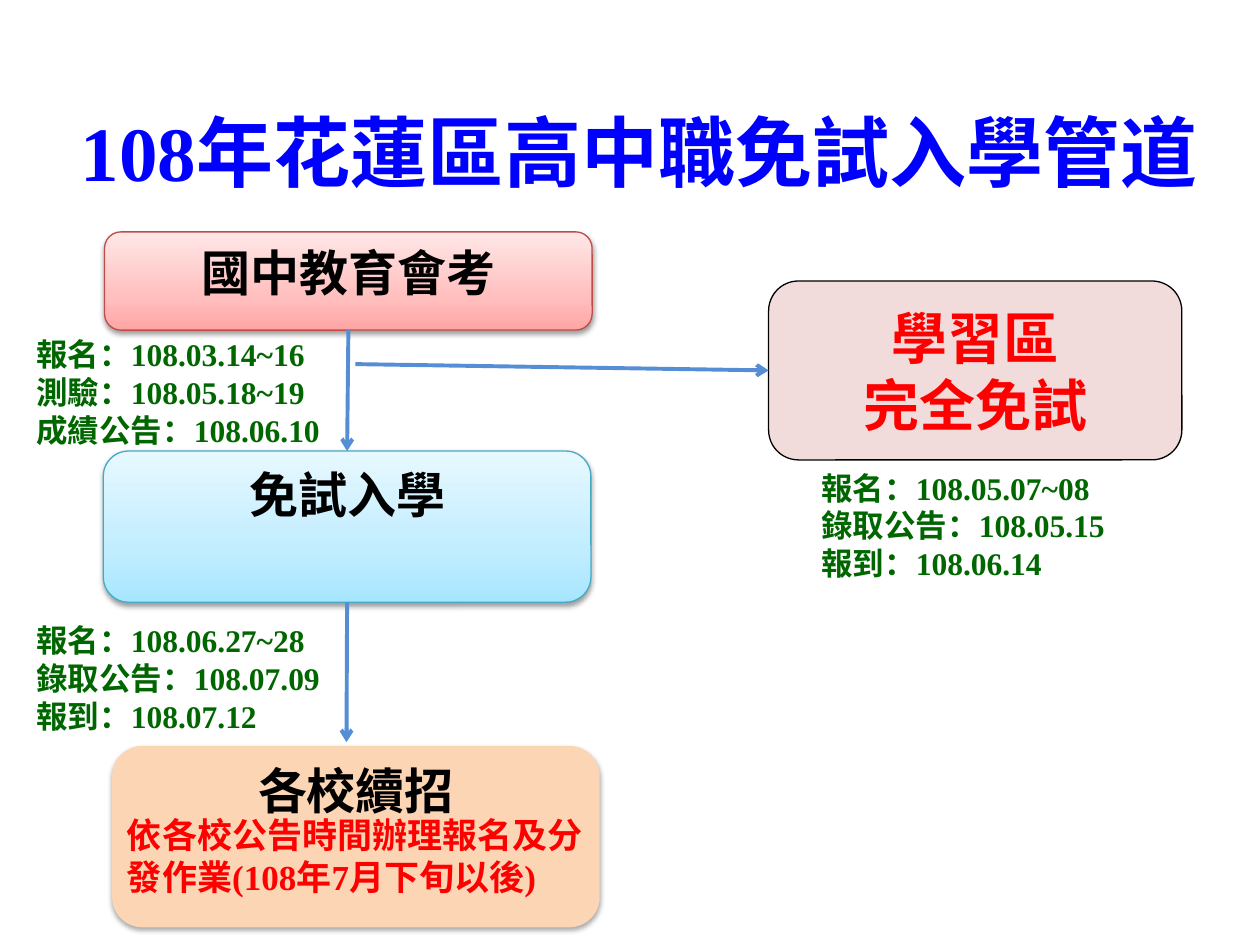
from lxml import etree
from pptx import Presentation
from pptx.dml.color import RGBColor
from pptx.enum import shapes, text
from pptx.oxml import parse_xml
from pptx.oxml.ns import nsdecls, qn
from pptx.util import Inches, Pt

SANS, SERIF = "Noto Sans CJK SC", "Times New Roman"
TOP, MIDDLE = text.MSO_ANCHOR.TOP, text.MSO_ANCHOR.MIDDLE
LEFT, CENTER = text.PP_ALIGN.LEFT, text.PP_ALIGN.CENTER


def rgb(value):
    return RGBColor.from_string(value)


def write(sp, lines, size, font, color, align=LEFT, anchor=TOP):
    tf = sp.text_frame
    tf.word_wrap = True
    tf.vertical_anchor = anchor
    tf.text = "\n".join(lines)
    for p in tf.paragraphs:
        p.alignment = align
        p.font.size, p.font.name, p.font.bold = Pt(size), font, True
        p.font.color.rgb = rgb(color)


prs = Presentation()
prs.slide_width, prs.slide_height = Inches(10), Inches(7.5)
s = prs.slides.add_slide(prs.slide_layouts[6])

title = s.shapes.add_textbox(Inches(0.35), Inches(0.76), Inches(9.45), Inches(0.87))
write(title, ["108年花蓮區高中職免試入學管道"], 44, SERIF, "0000FF", CENTER, MIDDLE)

# Stage boxes: place, fill stops from bottom to top, outline, shadow (opacity, distance)
stages = [
    (["國中教育會考"], (0.83, 1.84, 3.87, 0.78), ["FFA6A5", "FFC0BF", "FFE7E7"], "BF4C48", (38, 1.6)),
    (["免試入學"], (0.82, 3.58, 3.87, 1.2), ["A7E6FF", "C1EDFF", "E7F8FF"], "46AAC5", (38, 1.6)),
    (["學習區", "完全免試"], (6.1, 2.23, 3.28, 1.42), ["F2DCDB"], "000000", None),
    (["各校續招"], (0.89, 5.92, 3.87, 1.44), ["FCD5B5"], None, (35, 1.8)),
]
boxes = []
for lines, place, fills, outline, shadow in stages:
    sp = s.shapes.add_shape(shapes.MSO_SHAPE.ROUNDED_RECTANGLE, *map(Inches, place))
    sp.shadow.inherit = False
    if len(fills) == 1:
        sp.fill.solid()
        sp.fill.fore_color.rgb = rgb(fills[0])
    else:
        sp.fill.gradient()
        stops = sp._element.spPr.find(qn("a:gradFill")).find(qn("a:gsLst"))
        for old in list(stops):
            stops.remove(old)
        for pos, color in zip((0, 35, 100), fills):
            gs = etree.SubElement(stops, qn("a:gs"), pos=str(pos * 1000))
            etree.SubElement(gs, qn("a:srgbClr"), val=color)
        sp.fill.gradient_angle = 90
    if outline:
        sp.line.color.rgb = rgb(outline)
        sp.line.width = Pt(0.75)
    else:
        sp.line.fill.background()
    if shadow:
        opacity, dist = shadow
        sp._element.spPr.find(qn("a:effectLst")).append(parse_xml(
            f'<a:outerShdw {nsdecls("a")} blurRad="{Pt(3.1)}" dist="{Pt(dist)}" dir="5400000" '
            f'rotWithShape="0"><a:srgbClr val="000000"><a:alpha val="{opacity * 1000}"/>'
            '</a:srgbClr></a:outerShdw>'))
    if len(lines) == 2:
        tf = sp.text_frame
        tf.margin_left = tf.margin_top = tf.margin_right = tf.margin_bottom = 0
        write(sp, lines, 32, SANS, "FF0000", CENTER, MIDDLE)
    else:
        write(sp, lines, 28, SANS, "000000", CENTER)
    boxes.append(sp)
exam, admission, district, later = boxes

note = s.shapes.add_textbox(Inches(0.91), Inches(6.41), Inches(3.96), Inches(0.77))
write(note, ["依各校公告時間辦理報名及分發作業(108年7月下旬以後)"], 20, SERIF, "FF0000")

# Arrows: ends, then the boxes they are joined to
arrows = [
    ((2.76, 2.62, 2.75, 3.58), (exam, 2), (admission, 0)),
    ((2.74, 4.78, 2.75, 5.89), (admission, 2), None),
    ((2.82, 2.89, 6.1, 2.91), None, (district, 1)),
]
for ends, start, stop in arrows:
    cn = s.shapes.add_connector(shapes.MSO_CONNECTOR.STRAIGHT, *map(Inches, ends))
    if start:
        cn.begin_connect(*start)
    if stop:
        cn.end_connect(*stop)
    cn.line.color.rgb = rgb("558ED5")
    cn.line.width = Pt(2.25)
    etree.SubElement(cn.line._get_or_add_ln(), qn("a:tailEnd"), type="arrow")
    etree.SubElement(cn._element.spPr, qn("a:effectLst"))

dates = [
    (0.19, 2.61, ["報名：108.03.14~16", "測驗：108.05.18~19", "成績公告：108.06.10"]),
    (0.19, 4.88, ["報名：108.06.27~28", "錄取公告：108.07.09", "報到：108.07.12"]),
    (6.42, 3.67, ["報名：108.05.07~08", "錄取公告：108.05.15", "報到：108.06.14"]),
]
for x, y, lines in dates:
    tb = s.shapes.add_textbox(Inches(x), Inches(y), Inches(3.82), Inches(1.01))
    write(tb, lines, 18, SERIF, "006600")

prs.save("out.pptx")
